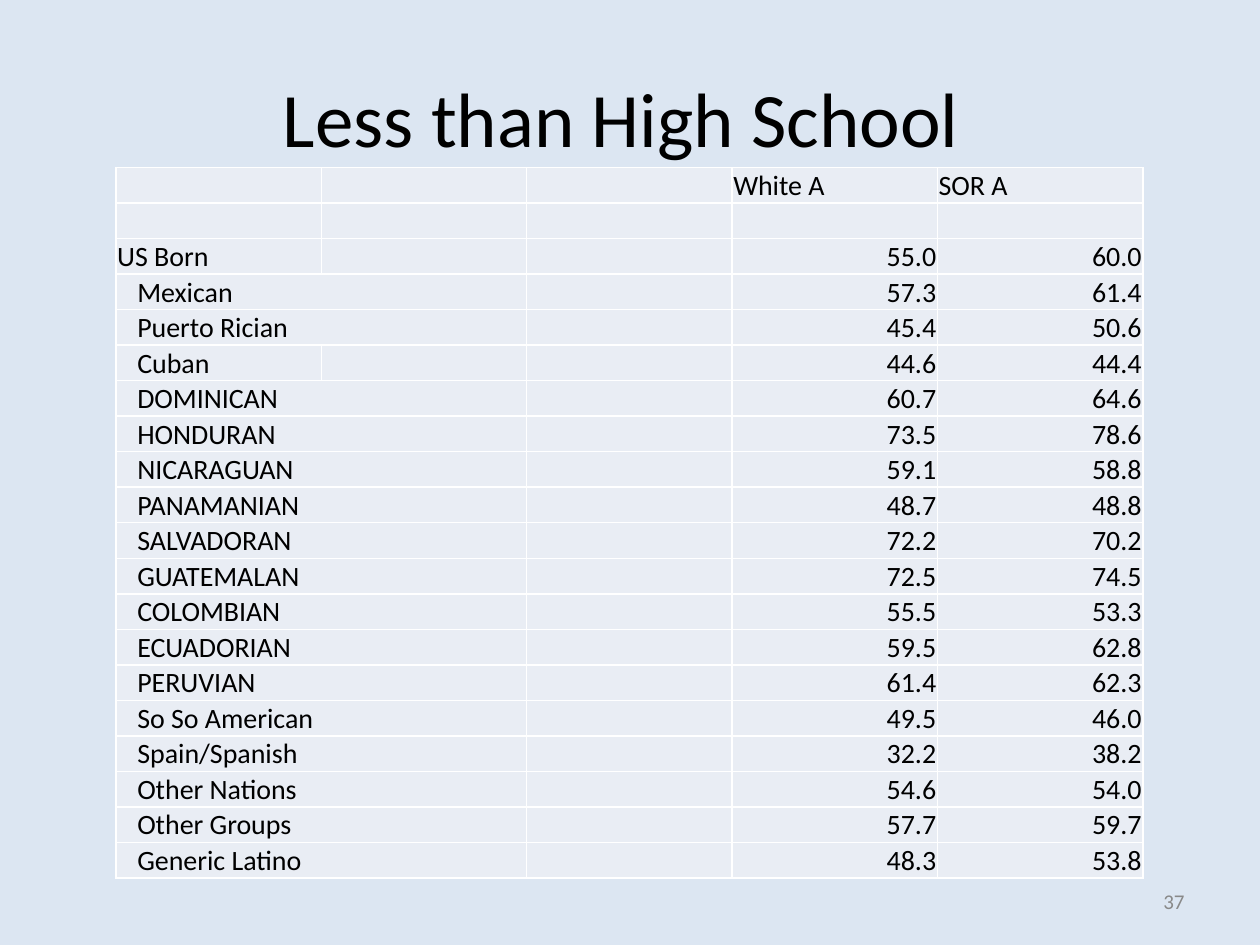
"""Build a slide with a table of Latino groups with less than high school education."""
from lxml.etree import SubElement
from pptx import Presentation
from pptx.dml.color import RGBColor
from pptx.enum.text import MSO_ANCHOR, PP_ALIGN
from pptx.oxml.ns import qn
from pptx.util import Inches, Pt

TITLE = "Less than High School "
PAGE_NUMBER = "37"
HEADERS = ("White A", "SOR A")
TOTAL_LABEL = "US Born"
UNMERGED_LABELS = (TOTAL_LABEL, "Cuban")
GROUPS = [
    (TOTAL_LABEL, "55.0", "60.0"),
    ("Mexican", "57.3", "61.4"),
    ("Puerto Rician", "45.4", "50.6"),
    ("Cuban", "44.6", "44.4"),
    ("DOMINICAN", "60.7", "64.6"),
    ("HONDURAN", "73.5", "78.6"),
    ("NICARAGUAN", "59.1", "58.8"),
    ("PANAMANIAN", "48.7", "48.8"),
    ("SALVADORAN", "72.2", "70.2"),
    ("GUATEMALAN", "72.5", "74.5"),
    ("COLOMBIAN", "55.5", "53.3"),
    ("ECUADORIAN", "59.5", "62.8"),
    ("PERUVIAN", "61.4", "62.3"),
    ("So So American", "49.5", "46.0"),
    ("Spain/Spanish", "32.2", "38.2"),
    ("Other Nations", "54.6", "54.0"),
    ("Other Groups", "57.7", "59.7"),
    ("Generic Latino", "48.3", "53.8"),
]

FONT = "Calibri"
BACKGROUND = RGBColor(0xDC, 0xE6, 0xF2)
CELL_FILL = RGBColor(0xE9, 0xED, 0xF4)
BLACK = RGBColor(0, 0, 0)
GRAY = RGBColor(0x89, 0x89, 0x89)
WHITE = RGBColor(0xFF, 0xFF, 0xFF)

COLUMN_COUNT = 5
COLUMN_WIDTH = 1.63
ROW_HEIGHT = 0.28
FIRST_GROUP_ROW = 2
TABLE_FONT_SIZE = 16
CELL_MARGIN = 0.01
GROUP_INDENT = 0.16


def write_text(text_frame, text, size, color, alignment):
    text_frame.text = text
    paragraph = text_frame.paragraphs[0]
    paragraph.alignment = alignment
    for run in paragraph.runs:
        run.font.name = FONT
        run.font.size = Pt(size)
        run.font.color.rgb = color


def add_borders(cell):
    properties = cell._tc.get_or_add_tcPr()
    for position, side in enumerate(("lnL", "lnR", "lnT", "lnB")):
        line = properties.makeelement(qn(f"a:{side}"), {"w": str(Pt(1))})
        fill = SubElement(line, qn("a:solidFill"))
        SubElement(fill, qn("a:srgbClr"), {"val": str(WHITE)})
        properties.insert(position, line)


def format_cell(cell, text, alignment, indent):
    cell.margin_left = Inches(CELL_MARGIN + indent)
    cell.margin_right = cell.margin_top = Inches(CELL_MARGIN)
    cell.margin_bottom = 0
    cell.vertical_anchor = MSO_ANCHOR.BOTTOM
    cell.fill.solid()
    cell.fill.fore_color.rgb = CELL_FILL
    add_borders(cell)
    if text:
        write_text(cell.text_frame, text, TABLE_FONT_SIZE, BLACK, alignment)
    else:
        paragraph = cell.text_frame.paragraphs[0]
        SubElement(paragraph._p, qn("a:endParaRPr"), {"sz": str(TABLE_FONT_SIZE * 100)})


def add_group_table(slide):
    rows = [("", "", "", *HEADERS), ("",) * COLUMN_COUNT]
    rows += [(label, "", "", *values) for label, *values in GROUPS]
    frame = slide.shapes.add_table(
        len(rows), COLUMN_COUNT, Inches(0.92), Inches(1.33),
        Inches(COLUMN_WIDTH * COLUMN_COUNT), Inches(ROW_HEIGHT * len(rows)))
    table = frame.table
    table.first_row = table.horz_banding = False
    for column in table.columns:
        column.width = Inches(COLUMN_WIDTH)
    for row_index, values in enumerate(rows):
        table.rows[row_index].height = Inches(ROW_HEIGHT)
        is_group = row_index >= FIRST_GROUP_ROW
        for column_index, text in enumerate(values):
            is_number = is_group and column_index >= 3
            is_nested = is_group and column_index == 0 and text != TOTAL_LABEL
            format_cell(table.cell(row_index, column_index), text,
                        PP_ALIGN.RIGHT if is_number else PP_ALIGN.LEFT,
                        GROUP_INDENT if is_nested else 0)
        if is_group and values[0] not in UNMERGED_LABELS:
            table.cell(row_index, 0).merge(table.cell(row_index, 1))


def main():
    presentation = Presentation()
    presentation.slide_width, presentation.slide_height = Inches(10), Inches(7.5)
    slide = presentation.slides.add_slide(presentation.slide_layouts[5])
    slide.background.fill.solid()
    slide.background.fill.fore_color.rgb = BACKGROUND

    title = slide.shapes.title
    title.left, title.top, title.width, title.height = map(Inches, (0.5, 0.3, 9, 1.25))
    title.text_frame.vertical_anchor = MSO_ANCHOR.MIDDLE
    write_text(title.text_frame, TITLE, 44, BLACK, PP_ALIGN.CENTER)

    add_group_table(slide)

    page_box = slide.shapes.add_textbox(*map(Inches, (7.17, 6.95, 2.33, 0.4)))
    page_box.text_frame.word_wrap = True
    page_box.text_frame.vertical_anchor = MSO_ANCHOR.MIDDLE
    write_text(page_box.text_frame, PAGE_NUMBER, 12, GRAY, PP_ALIGN.RIGHT)

    presentation.save("out.pptx")


if __name__ == "__main__":
    main()
